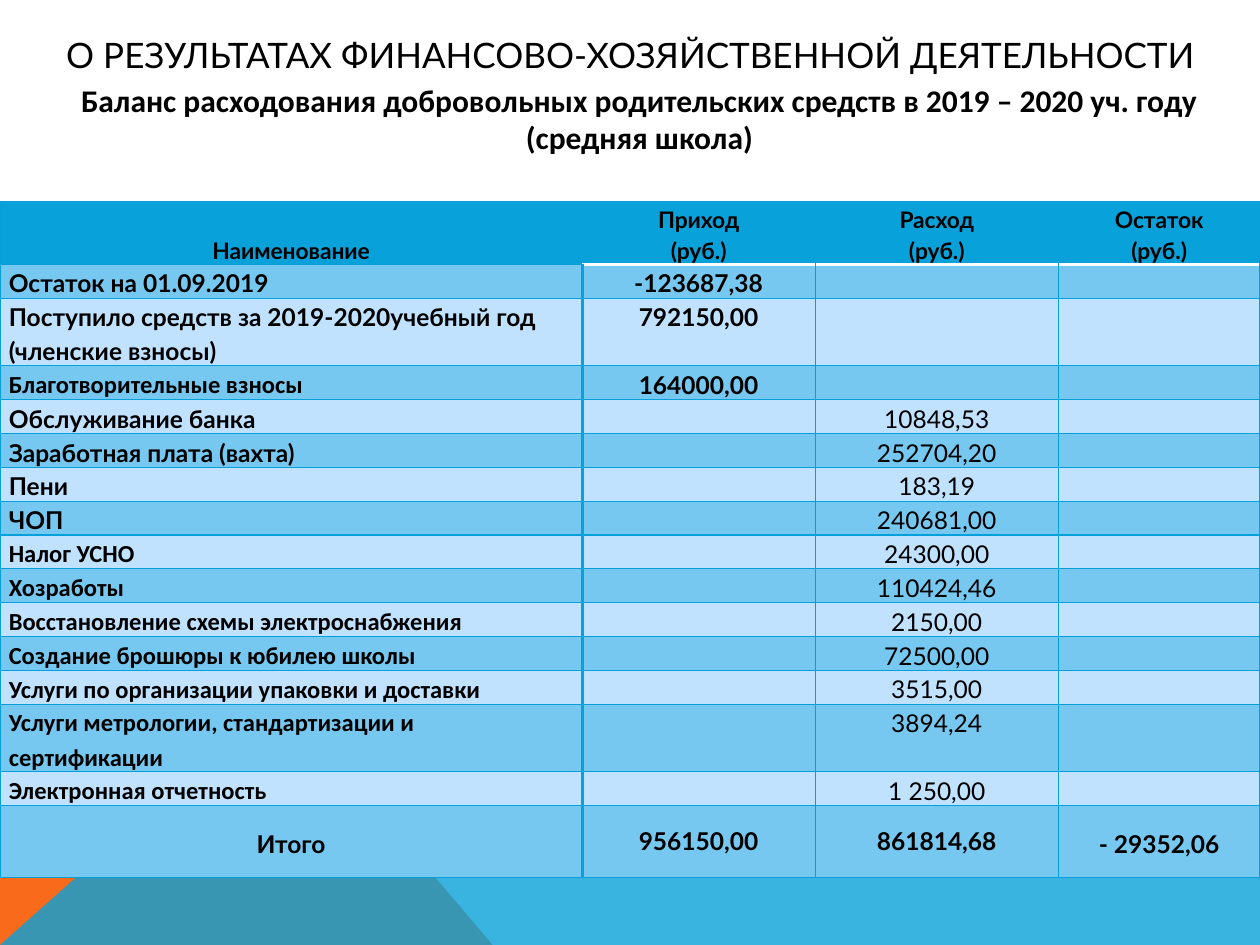
from lxml.etree import SubElement
from pptx import Presentation
from pptx.dml.color import RGBColor
from pptx.enum.text import MSO_ANCHOR, PP_ALIGN
from pptx.oxml.ns import qn
from pptx.util import Inches, Pt

BLUE, BORDER, ORANGE = "08A1D9", "03A0D9", "F96A1B"
BAND_DARK, BAND_LIGHT = "77C8F0", "C1E2FF"
BLACK, WHITE = "000000", "FFFFFF"

HEADINGS = ["Наименование", "Приход\n(руб.)", "Расход\n(руб.)", "Остаток\n(руб.)"]
ENTRIES = [
    ("Остаток на 01.09.2019", "Lato", "-123687,38", ""),
    ("Поступило средств за 2019-2020учебный год (членские взносы)", "Lato", "792150,00", ""),
    ("Благотворительные взносы", "Calibri", "164000,00", ""),
    ("Обслуживание банка", "Lato", "", "10848,53"),
    ("Заработная плата (вахта)", "Lato", "", "252704,20"),
    ("Пени", "Lato", "", "183,19"),
    ("ЧОП", "Lato", "", "240681,00"),
    ("Налог УСНО", "Calibri", "", "24300,00"),
    ("Хозработы", "Calibri", "", "110424,46"),
    ("Восстановление схемы электроснабжения", "Calibri", "", "2150,00"),
    ("Создание брошюры к юбилею школы", "Calibri", "", "72500,00"),
    ("Услуги по организации упаковки и доставки", "Calibri", "", "3515,00"),
    ("Услуги метрологии, стандартизации и сертификации", "Calibri", "", "3894,24"),
    ("Электронная отчетность", "Calibri", "", "1 250,00"),
]
TOTALS = ["Итого", "956150,00", "861814,68", "- 29352,06"]


def color(hex_string):
    return RGBColor.from_string(hex_string)


class SlideBuilder:
    """Places elements on a grid of 100 columns by 75 rows."""

    def __init__(self, presentation):
        self.column = presentation.slide_width / 100
        self.row = presentation.slide_height / 75
        self.slide = presentation.slides.add_slide(presentation.slide_layouts[6])

    def box(self, left, top, width, height):
        return (round(left * self.column), round(top * self.row),
                round(width * self.column), round(height * self.row))

    def set_text(self, frame, text, size, font="Lato", bold=False,
                 align=PP_ALIGN.CENTER, spacing=None):
        frame.word_wrap = True
        frame.text = text
        for paragraph in frame.paragraphs:
            paragraph.alignment = align
            paragraph.line_spacing = spacing
            paragraph.font.name = font
            paragraph.font.size = Pt(size)
            paragraph.font.bold = bold
            paragraph.font.color.rgb = color(BLACK)
            if not text:  # an empty line takes its height from its end mark
                SubElement(paragraph._p, qn("a:endParaRPr"), sz=str(size * 100))

    def text(self, place, text, size, font, bold=False, anchor=MSO_ANCHOR.TOP):
        frame = self.slide.shapes.add_textbox(*self.box(*place)).text_frame
        self.set_text(frame, text, size, font, bold)
        frame.vertical_anchor = anchor

    def polygon(self, points, fill, opacity=100):
        corners = [(round(x * self.column), round(y * self.row)) for x, y in points]
        builder = self.slide.shapes.build_freeform(*corners[0])
        builder.add_line_segments(corners[1:], close=True)
        shape = builder.convert_to_shape()
        shape.shadow.inherit = False
        shape.line.fill.background()
        shape.fill.solid()
        shape.fill.fore_color.rgb = color(fill)
        if opacity < 100:
            fill_color = shape._element.spPr.find(".//" + qn("a:srgbClr"))
            SubElement(fill_color, qn("a:alpha"), val=str(opacity * 1000))

    def table(self, left, top, widths, heights):
        frame = self.slide.shapes.add_table(
            len(heights), len(widths), *self.box(left, top, sum(widths), sum(heights)))
        for column, width in zip(frame.table.columns, widths):
            column.width = round(width * self.column)
        for row, height in zip(frame.table.rows, heights):
            row.height = round(height * self.row)
        return frame.table

    def cell(self, cell, text, fill, size=14, anchor=MSO_ANCHOR.TOP, borders=None, **style):
        """Fill one cell; borders maps a side (L, R, T, B) to (colour, points)."""
        cell.margin_left = cell.margin_right = Inches(0.07)
        cell.margin_top = cell.margin_bottom = 0
        cell.vertical_anchor = anchor
        self.set_text(cell.text_frame, text, size, **{"spacing": 1.15, **style})
        properties = cell._tc.get_or_add_tcPr()
        for side in "LRTB":
            line_color, points = (borders or {}).get(side, (BORDER, 0.75))
            line = SubElement(properties, qn(f"a:ln{side}"), w=str(Pt(points)))
            solid = SubElement(line, qn("a:solidFill"))
            SubElement(solid, qn("a:srgbClr"), val=line_color)
        cell.fill.solid()
        cell.fill.fore_color.rgb = color(fill)


def add_balance_table(builder):
    heights = [4.7] + [2.6] * len(ENTRIES) + [5.7]
    table = builder.table(0, 16, [46.2, 18.5, 19.3, 16], heights)
    name_edge = {"R": (BLUE, 2)}
    value_edge = {"L": (BLUE, 2)}

    for index, heading in enumerate(HEADINGS):
        edges = {"L": (BLUE, 0.75), "R": (BLUE, 0.75), "B": (WHITE, 2)} if index else None
        builder.cell(table.cell(0, index), heading, BLUE, 13, MSO_ANCHOR.BOTTOM,
                     edges, bold=True)

    for number, (name, font, income, expense) in enumerate(ENTRIES, start=1):
        fill = BAND_DARK if number % 2 else BAND_LIGHT
        top = {"T": (WHITE, 2)} if number == 1 else {}
        builder.cell(table.cell(number, 0), name, fill, borders=name_edge,
                     font=font, bold=True, align=PP_ALIGN.LEFT)
        builder.cell(table.cell(number, 1), income, fill,
                     borders={**value_edge, **top}, bold=True)
        builder.cell(table.cell(number, 2), expense, fill, borders=top)
        builder.cell(table.cell(number, 3), "", fill, borders=top)

    for index, total in enumerate(TOTALS):
        builder.cell(table.cell(len(ENTRIES) + 1, index), total, BAND_DARK,
                     anchor=MSO_ANCHOR.MIDDLE,
                     borders={0: name_edge, 1: value_edge}.get(index), bold=True,
                     spacing=1.0 if index in (1, 2) else 1.15)


def main():
    presentation = Presentation()
    presentation.slide_width, presentation.slide_height = Inches(10), Inches(7.5)
    builder = SlideBuilder(presentation)
    builder.polygon([(0, 75), (0, 55.2), (22.3, 55.2), (39.1, 75)], ORANGE)
    builder.polygon([(0, 75), (22.3, 55.2), (100, 55.3), (100, 75)], BLUE, opacity=80)
    builder.text((2.8, 1.3, 94.5, 6), "О РЕЗУЛЬТАТАХ ФИНАНСОВО-ХОЗЯЙСТВЕННОЙ ДЕЯТЕЛЬНОСТИ",
                 20, "Lato", anchor=MSO_ANCHOR.MIDDLE)
    builder.text((3.5, 5.9, 94.5, 10.1),
                 "Баланс расходования добровольных родительских средств "
                 "в 2019 – 2020 уч. году (средняя школа)", 18, "Calibri", bold=True)
    add_balance_table(builder)
    presentation.save("out.pptx")


if __name__ == "__main__":
    main()
